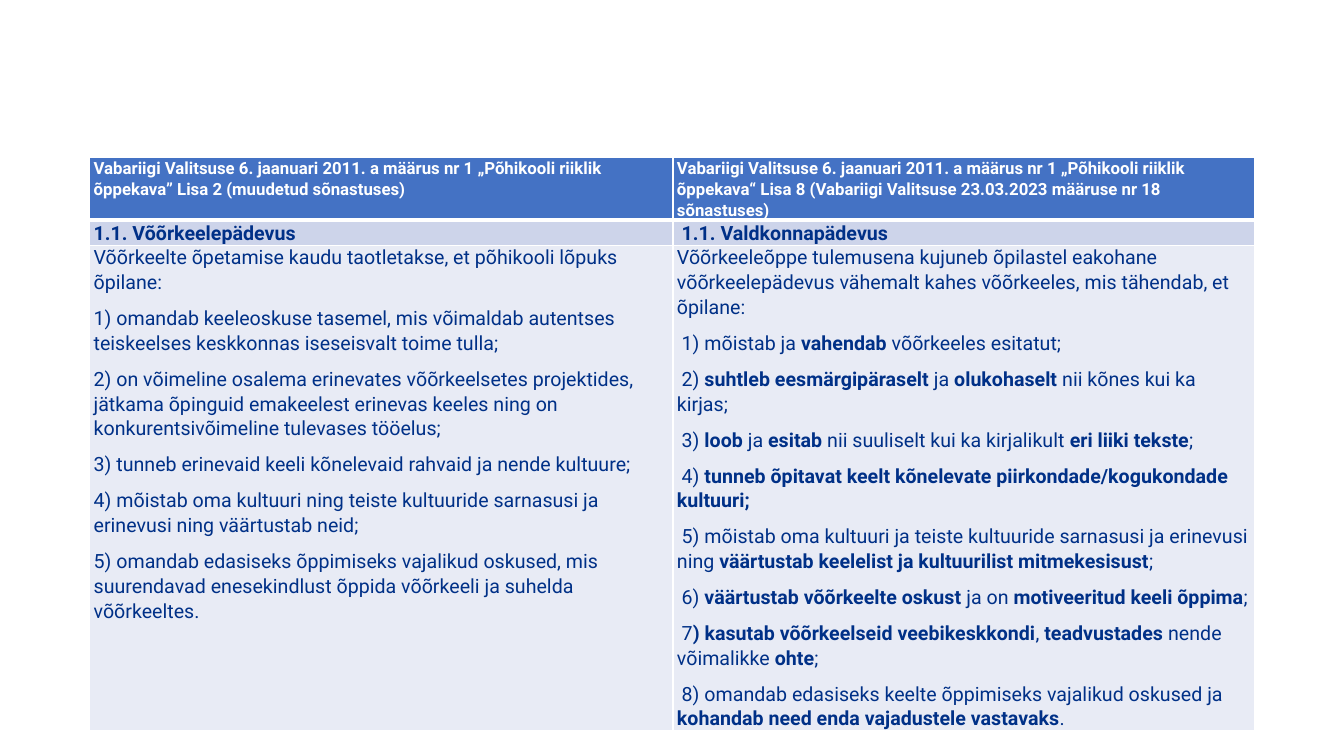
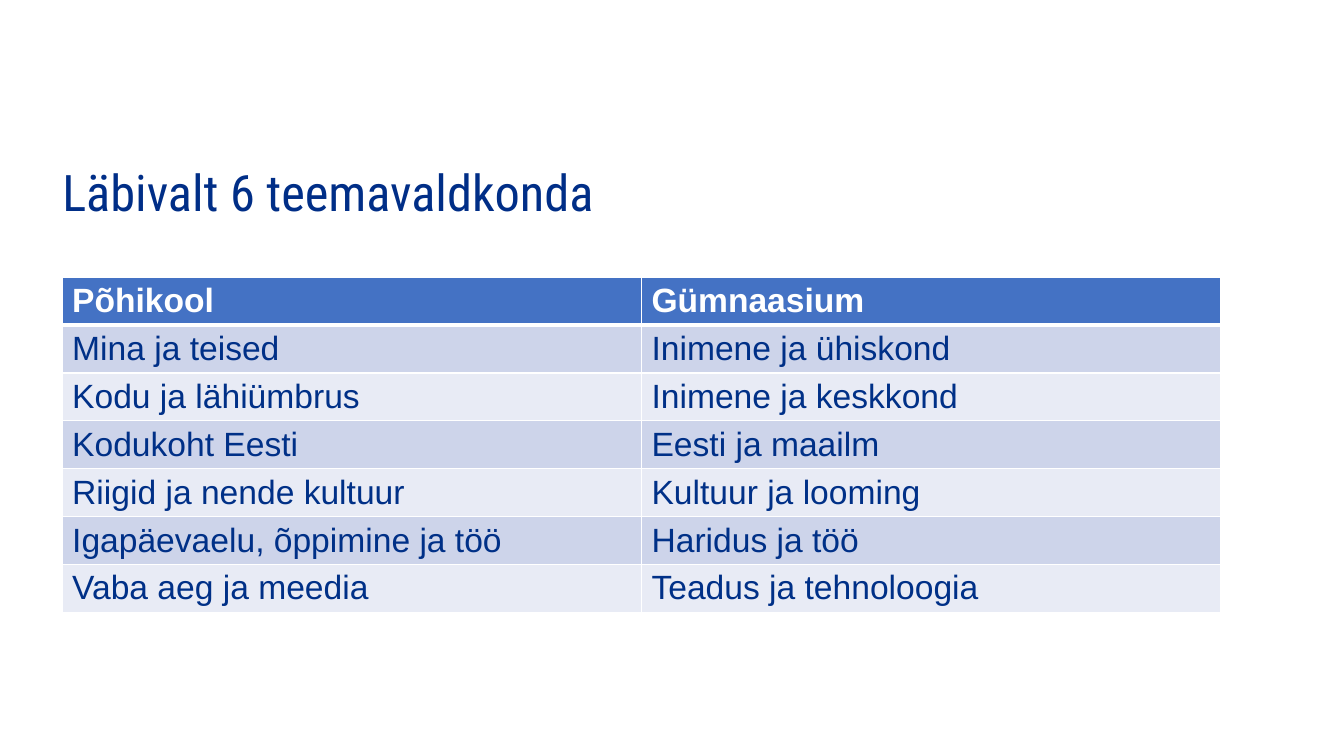
from dataclasses import dataclass

from lxml import etree
from pptx import Presentation
from pptx.dml.color import RGBColor
from pptx.enum.text import MSO_ANCHOR, MSO_AUTO_SIZE, PP_ALIGN
from pptx.oxml.ns import qn
from pptx.util import Cm, Pt

LEFT = PP_ALIGN.LEFT
MIDDLE = MSO_ANCHOR.MIDDLE
NO_AUTOFIT = MSO_AUTO_SIZE.NONE
TITLE_ONLY, BLANK = 5, 6


@dataclass(frozen=True)
class Theme:
    title_color: str = "002E87"
    text_color: str = "003087"
    light: str = "FFFFFF"
    header_fill: str = "4472C4"
    band_fills: tuple = ("E8EBF5", "CDD4EA")
    title_font: str = "Roboto Condensed"
    title_size: int = 36
    thin_rule: int = 1
    thick_rule: int = 3


@dataclass(frozen=True)
class TableStyle:
    font: str
    header_size: int
    body_size: int
    margin_x: float
    margin_y: float
    line_spacing: float = 1.0
    space_before: int = 0


@dataclass(frozen=True)
class Entry:
    paragraphs: tuple
    bold: bool = False
    indent_from: int = 99


THEME = Theme()
COMPARISON_STYLE = TableStyle("Roboto", 12, 14, 0.1, 0, 1.07, 8)
TOPICS_STYLE = TableStyle("Arial", 24, 24, 0.25, 0.13)
ITEM_INDENT = Cm(0.12)

OLD_COMPETENCE = (
    "Võõrkeelte õpetamise kaudu taotletakse, et põhikooli lõpuks õpilane:",
    "1) omandab keeleoskuse tasemel, mis võimaldab autentses teiskeelses keskkonnas "
    "iseseisvalt toime tulla;",
    "2) on võimeline osalema erinevates võõrkeelsetes projektides, jätkama õpinguid "
    "emakeelest erinevas keeles ning on konkurentsivõimeline tulevases tööelus;",
    "3) tunneb erinevaid keeli kõnelevaid rahvaid ja nende kultuure;",
    "4) mõistab oma kultuuri ning teiste kultuuride sarnasusi ja erinevusi ning "
    "väärtustab neid;",
    "5) omandab edasiseks õppimiseks vajalikud oskused, mis suurendavad "
    "enesekindlust õppida võõrkeeli ja suhelda võõrkeeltes.",
)
NEW_COMPETENCE = (
    "Võõrkeeleõppe tulemusena kujuneb õpilastel eakohane võõrkeelepädevus vähemalt "
    "kahes võõrkeeles, mis tähendab, et õpilane:",
    "1) mõistab ja **vahendab** võõrkeeles esitatut;",
    "2) **suhtleb eesmärgipäraselt **ja **olukohaselt** nii kõnes kui ka kirjas;",
    "3) **loob** ja **esitab** nii suuliselt kui ka kirjalikult **eri liiki tekste**;",
    "4) **tunneb õpitavat keelt kõnelevate piirkondade/kogukondade kultuuri;**",
    "5) mõistab oma kultuuri ja teiste kultuuride sarnasusi ja erinevusi ning "
    "**väärtustab keelelist ja kultuurilist mitmekesisust**;",
    "6) **väärtustab võõrkeelte oskust **ja on **motiveeritud keeli õppima**;",
    "7**) kasutab võõrkeelseid veebikeskkondi**, **teadvustades** nende võimalikke **ohte**;",
    "8) omandab edasiseks keelte õppimiseks vajalikud oskused ja "
    "**kohandab need enda vajadustele vastavaks**.",
)
COMPARISON = (
    (
        Entry(("Vabariigi Valitsuse 6. jaanuari 2011. a määrus nr 1 „Põhikooli riiklik "
               "õppekava” Lisa 2 (muudetud sõnastuses)",), bold=True),
        Entry(("Vabariigi Valitsuse 6. jaanuari 2011. a määrus nr 1 „Põhikooli riiklik "
               "õppekava“ Lisa 8 (Vabariigi Valitsuse 23.03.2023 määruse nr 18 "
               "sõnastuses)",), bold=True),
    ),
    (
        Entry(("1.1. Võõrkeelepädevus",), bold=True),
        Entry(("1.1. Valdkonnapädevus",), bold=True, indent_from=0),
    ),
    (Entry(OLD_COMPETENCE), Entry(NEW_COMPETENCE, indent_from=1)),
)
TOPICS = (
    ("Põhikool", "Gümnaasium"),
    ("Mina ja teised", "Inimene ja ühiskond"),
    ("Kodu ja lähiümbrus", "Inimene ja keskkond"),
    ("Kodukoht Eesti", "Eesti ja maailm"),
    ("Riigid ja nende kultuur", "Kultuur ja looming"),
    ("Igapäevaelu, õppimine ja töö", "Haridus ja töö"),
    ("Vaba aeg ja meedia", "Teadus ja tehnoloogia"),
)


def set_font(font, name, size, color, bold=False):
    font.name = name
    font.size = Pt(size)
    font.bold = bold
    font.color.rgb = RGBColor.from_string(color)


def add_marked_runs(paragraph, marked_text):
    for position, part in enumerate(marked_text.split("**")):
        if part:
            run = paragraph.add_run()
            run.text = part
            if position % 2:
                run.font.bold = True


def set_borders(cell, row):
    properties = cell._tc.get_or_add_tcPr()
    top = THEME.thick_rule if row == 1 else THEME.thin_rule
    bottom = THEME.thick_rule if row == 0 else THEME.thin_rule
    widths = {"lnL": THEME.thin_rule, "lnR": THEME.thin_rule, "lnT": top, "lnB": bottom}
    for side, width in widths.items():
        border = etree.SubElement(properties, qn(f"a:{side}"), w=str(Pt(width)))
        fill = etree.SubElement(border, qn("a:solidFill"))
        etree.SubElement(fill, qn("a:srgbClr"), val=THEME.light)


def fill_cell(cell, entry, row, style):
    header = row == 0
    set_borders(cell, row)
    cell.fill.solid()
    cell.fill.fore_color.rgb = RGBColor.from_string(
        THEME.header_fill if header else THEME.band_fills[row % 2])
    cell.margin_left = cell.margin_right = Cm(style.margin_x)
    cell.margin_top = cell.margin_bottom = Cm(style.margin_y)
    frame = cell.text_frame
    for position, text in enumerate(entry.paragraphs):
        paragraph = frame.add_paragraph() if position else frame.paragraphs[0]
        add_marked_runs(paragraph, text)
        paragraph.line_spacing = style.line_spacing
        if position:
            paragraph.space_before = Pt(style.space_before)
        if position >= entry.indent_from:
            paragraph._p.get_or_add_pPr().set("indent", str(ITEM_INDENT))
        set_font(paragraph.font, style.font,
                 style.header_size if header else style.body_size,
                 THEME.light if header else THEME.text_color, entry.bold)


def add_styled_table(slide, left, top, column_widths, row_heights, rows, style):
    table = slide.shapes.add_table(
        len(rows), len(column_widths), Cm(left), Cm(top),
        Cm(sum(column_widths)), Cm(sum(row_heights))).table
    for column, width in zip(table.columns, column_widths):
        column.width = Cm(width)
    for row, (entries, height) in enumerate(zip(rows, row_heights)):
        table.rows[row].height = Cm(height)
        for column, entry in enumerate(entries):
            fill_cell(table.cell(row, column), entry, row, style)


def set_title(slide, text):
    title = slide.shapes.title
    title.left, title.top, title.width, title.height = Cm(1.57), Cm(4.65), Cm(22.58), Cm(2.06)
    frame = title.text_frame
    frame.text = text
    frame.word_wrap = True
    frame.auto_size = NO_AUTOFIT
    frame.vertical_anchor = MIDDLE
    frame.margin_left = frame.margin_right = frame.margin_top = frame.margin_bottom = 0
    heading = frame.paragraphs[0]
    heading.alignment = LEFT
    heading.line_spacing = 0.9
    set_font(heading.font, THEME.title_font, THEME.title_size, THEME.title_color)


def add_comparison_slide(deck):
    slide = deck.slides.add_slide(deck.slide_layouts[BLANK])
    add_styled_table(slide, 2.26, 3.96, (14.7, 14.66), (1.57, 0.58, 12.12),
                     COMPARISON, COMPARISON_STYLE)


def add_topics_slide(deck):
    slide = deck.slides.add_slide(deck.slide_layouts[TITLE_ONLY])
    set_title(slide, "Läbivalt 6 teemavaldkonda\v")
    rows = [[Entry((text,), bold=row == 0) for text in texts]
            for row, texts in enumerate(TOPICS)]
    add_styled_table(slide, 1.57, 6.99, (14.6, 14.6), (1.17,) * len(rows),
                     rows, TOPICS_STYLE)


def main():
    deck = Presentation()
    deck.slide_width, deck.slide_height = Cm(33.87), Cm(19.05)
    add_comparison_slide(deck)
    add_topics_slide(deck)
    deck.save("out.pptx")


if __name__ == "__main__":
    main()
